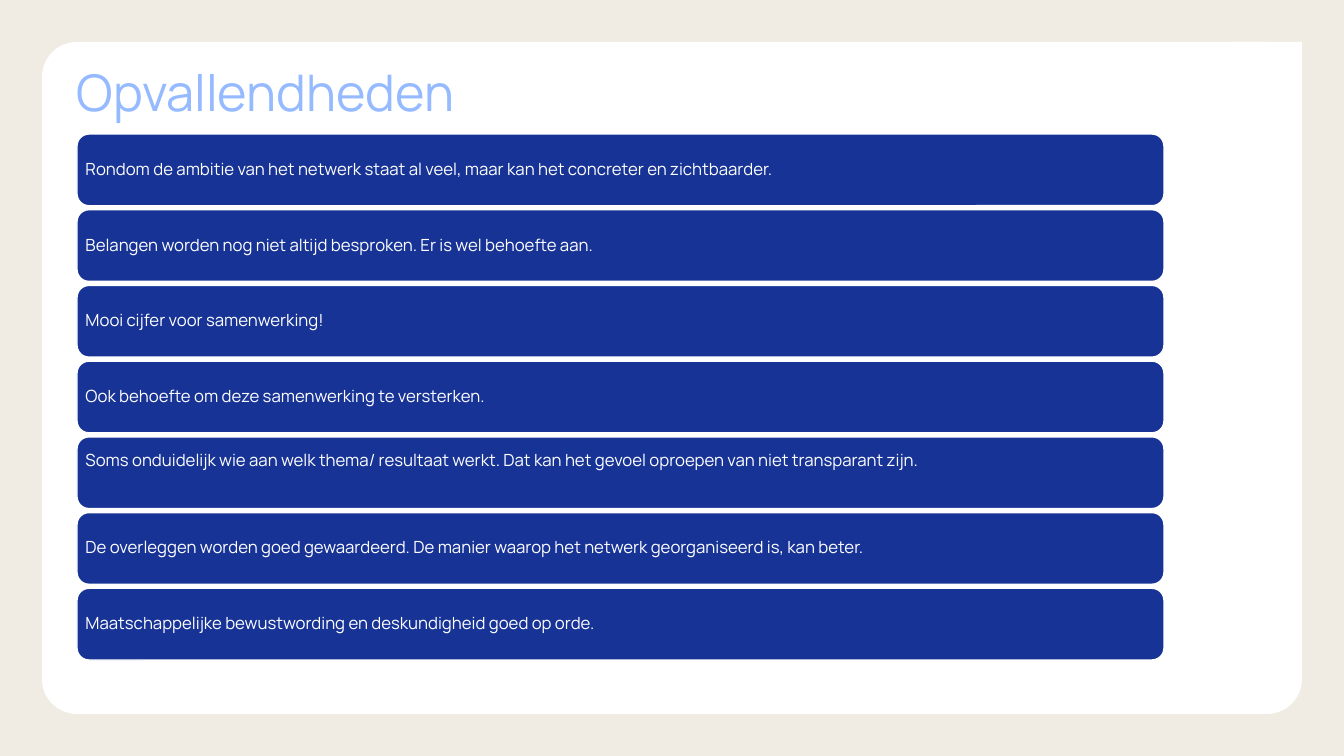
from pptx import Presentation
from pptx.dml.color import RGBColor
from pptx.enum.shapes import MSO_SHAPE
from pptx.enum.text import MSO_ANCHOR, PP_ALIGN
from pptx.util import Pt

PX = 914400 / 100.8  # EMU per px
COLORS = {"page": "F1ECE3", "card": "FFFFFF", "title": "95BAFF",
          "bar": "173395", "bar_text": "FFFFFF"}
TITLE_FORMAT = {"name": "Manrope", "size": Pt(36)}
FINDING_FORMAT = {"name": "Manrope", "size": Pt(12)}

FINDINGS = [
    "Rondom de ambitie van het netwerk staat al veel, maar kan het concreter en zichtbaarder.",
    "Belangen worden nog niet altijd besproken. Er is wel behoefte aan.",
    "Mooi cijfer voor samenwerking!",
    "Ook behoefte om deze samenwerking te versterken.",
    "Soms onduidelijk wie aan welk thema/ resultaat werkt. Dat kan het gevoel oproepen van niet transparant zijn.",
    "De overleggen worden goed gewaardeerd. De manier waarop het netwerk georganiseerd is, kan beter.",
    "Maatschappelijke bewustwording en deskundigheid goed op orde.",
]
RAISED_FINDING = 4  # this text sits above the middle of its bar


def px(length):
    return round(length * PX)


def color(name):
    return RGBColor.from_string(COLORS[name])


def add_panel(slide, preset, box, fill):
    panel = slide.shapes.add_shape(preset, *map(px, box))
    panel.shadow.inherit = False
    panel.fill.solid()
    panel.fill.fore_color.rgb = color(fill)
    panel.line.fill.background()
    return panel


def write_text(holder, text, font_format, text_color, anchor, insets):
    frame = holder.text_frame
    frame.word_wrap = True
    frame.vertical_anchor = anchor
    for side, inset in zip(("left", "top", "right", "bottom"), insets):
        setattr(frame, f"margin_{side}", px(inset))
    paragraph = frame.paragraphs[0]
    paragraph.alignment = PP_ALIGN.LEFT
    paragraph.line_spacing = 0.9
    run = paragraph.add_run()
    run.text = text
    for attribute, value in font_format.items():
        setattr(run.font, attribute, value)
    run.font.color.rgb = color(text_color)


def draw_card(slide, left, top, width, height):
    # White card with a square top right corner
    card = add_panel(slide, MSO_SHAPE.ROUNDED_RECTANGLE,
                     (left, top, width, height), "card")
    card.adjustments[0] = 0.052
    corner = 70
    add_panel(slide, MSO_SHAPE.RECTANGLE,
              (left + width - corner, top, corner, corner), "card")


def draw_title(slide, left, top, width, height):
    title = slide.shapes.add_textbox(*map(px, (left, top, width, height)))
    write_text(title, "Opvallendheden", TITLE_FORMAT, "title",
               MSO_ANCHOR.TOP, (0, 0, 0, 0))


def draw_findings(slide, left, top, width, height):
    # Equal bars, stacked with a fixed gap
    gap = 4
    bar_height = (height - gap * (len(FINDINGS) - 1)) / len(FINDINGS)
    for index, finding in enumerate(FINDINGS):
        bar_top = top + index * (bar_height + gap)
        bar = add_panel(slide, MSO_SHAPE.ROUNDED_RECTANGLE,
                        (left, bar_top, width, bar_height), "bar")
        bar.line.color.rgb = color("card")
        bar.line.width = Pt(1)
        bottom_inset = 29 if index == RAISED_FINDING else 5
        write_text(bar, finding, FINDING_FORMAT, "bar_text",
                   MSO_ANCHOR.MIDDLE, (5, 5, 5, bottom_inset))


def main():
    presentation = Presentation()
    presentation.slide_width = px(1344)
    presentation.slide_height = px(756)
    slide = presentation.slides.add_slide(presentation.slide_layouts[6])
    slide.background.fill.solid()
    slide.background.fill.fore_color.rgb = color("page")
    draw_card(slide, 42, 42, 1260, 672)
    draw_title(slide, 77, 68, 1190, 49)
    draw_findings(slide, 77, 134, 1087, 526)
    presentation.save("out.pptx")


if __name__ == "__main__":
    main()
